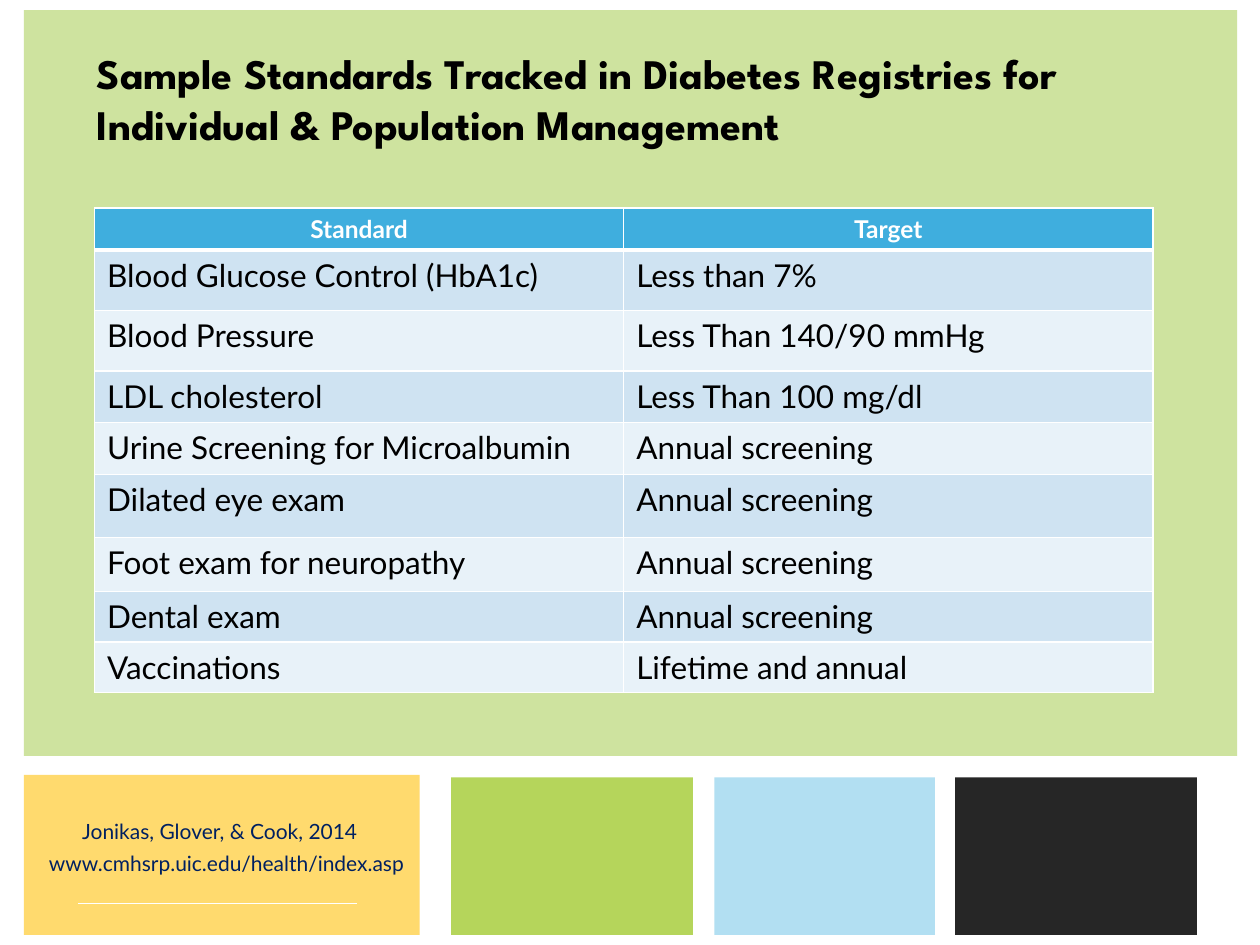
"""Build the slide of sample standards tracked in diabetes registries."""
from lxml import etree
from pptx import Presentation, util as u
from pptx.dml import color
from pptx.enum import shapes, text
from pptx.oxml import ns


def paint(target, value):
    """Give a fill or a font a solid colour from a hex string."""
    if hasattr(target, "solid"):
        target.solid()
        target.fore_color.rgb = color.RGBColor.from_string(value)
    else:
        target.color.rgb = color.RGBColor.from_string(value)


def write(frame, words, hue, align, formats):
    """Write one formatted paragraph into a text frame."""
    paragraph = frame.paragraphs[0]
    paragraph.alignment = align
    run = paragraph.add_run()
    run.text = words
    paint(run.font, hue)
    for name, value in formats.items():
        setattr(run.font, name, value)


LEFT, CENTER = text.PP_ALIGN.LEFT, text.PP_ALIGN.CENTER
presentation = Presentation()
presentation.slide_width, presentation.slide_height = u.Inches(10), u.Inches(7.5)
column = presentation.slide_width / 100
row = presentation.slide_height / 100
slide = presentation.slides.add_slide(presentation.slide_layouts[6])

panels = [
    (1.9, 82, 31.4, 16.93, "FFDA6E"),
    (1.9, 1.07, 96.3, 78.93, "CEE39F"),
    (56.7, 82.27, 17.5, 16.67, "B2DFF2"),
    (75.8, 82.27, 19.2, 16.67, "262626"),
    (35.8, 82.27, 19.2, 16.67, "B5D55B"),
]
for left, top, width, height, hue in panels:
    panel = slide.shapes.add_shape(
        shapes.MSO_SHAPE.RECTANGLE,
        int(left * column), int(top * row), int(width * column), int(height * row))
    panel.shadow.inherit = False
    panel.line.fill.background()
    paint(panel.fill, hue)

credit = {"size": u.Pt(12), "name": "Lato"}
heading = {"size": u.Pt(24), "name": "League Spartan", "bold": True}
captions = [
    (3.3, 86, 28.3, 4, "Jonikas, Glover, & Cook, 2014", "002060", CENTER, credit),
    (2.9, 89.33, 30.8, 4, "www.cmhsrp.uic.edu/health/index.asp", "002060", LEFT, credit),
    (6.7, 4.4, 85, 12.13, "Sample Standards Tracked in Diabetes Registries for "
     "Individual & Population Management", "000000", LEFT, heading),
]
for left, top, width, height, words, hue, align, formats in captions:
    box = slide.shapes.add_textbox(
        int(left * column), int(top * row), int(width * column), int(height * row))
    box.text_frame.word_wrap = True
    write(box.text_frame, words, hue, align, formats)

rule = slide.shapes.add_connector(
    shapes.MSO_CONNECTOR.STRAIGHT,
    int(6.2 * column), int(95.6 * row), int(28.3 * column), int(95.6 * row))
rule.line.width = u.Pt(1)
paint(rule.line, "FFFFFF")
etree.SubElement(rule.element.spPr, ns.qn("a:effectLst"))

standards = [
    ("Standard", "Target", 4.4),
    ("Blood Glucose Control (HbA1c)", "Less than 7%", 6.4),
    ("Blood Pressure", "Less Than 140/90 mmHg", 6.4),
    ("LDL cholesterol", "Less Than 100 mg/dl", 5.47),
    ("Urine Screening for Microalbumin", "Annual screening", 5.47),
    ("Dilated eye exam", "Annual screening", 6.67),
    ("Foot exam for neuropathy", "Annual screening", 5.73),
    ("Dental exam", "Annual screening", 5.33),
    ("Vaccinations", "Lifetime and annual", 5.33),
]
table = slide.shapes.add_table(
    len(standards), 2, int(7.5 * column), int(22 * row),
    int(84 * column), int(sum(entry[2] for entry in standards) * row)).table
for index, (standard, target, height) in enumerate(standards):
    table.rows[index].height = int(height * row)
    header = index == 0
    band = "3FAEDE" if header else ("E8F2F9", "CFE3F2")[index % 2]
    hue, align = ("FFFFFF", CENTER) if header else ("000000", LEFT)
    formats = {"size": u.Pt(14 if header else 18), "name": "Lato", "bold": header}
    for cell, words in zip(table.rows[index].cells, (standard, target)):
        paint(cell.fill, band)
        cell.vertical_anchor = text.MSO_ANCHOR.MIDDLE if header else text.MSO_ANCHOR.TOP
        write(cell.text_frame, words, hue, align, formats)
        weights = {"L": 1, "R": 1, "T": 3 if index == 1 else 1, "B": 3 if header else 1}
        properties = cell._tc.get_or_add_tcPr()
        for place, (side, weight) in enumerate(weights.items()):
            border = etree.Element(ns.qn(f"a:ln{side}"), w=str(u.Pt(weight)))
            fill = etree.SubElement(border, ns.qn("a:solidFill"))
            etree.SubElement(fill, ns.qn("a:srgbClr"), val="FFFFFF")
            properties.insert(place, border)

presentation.save("out.pptx")
